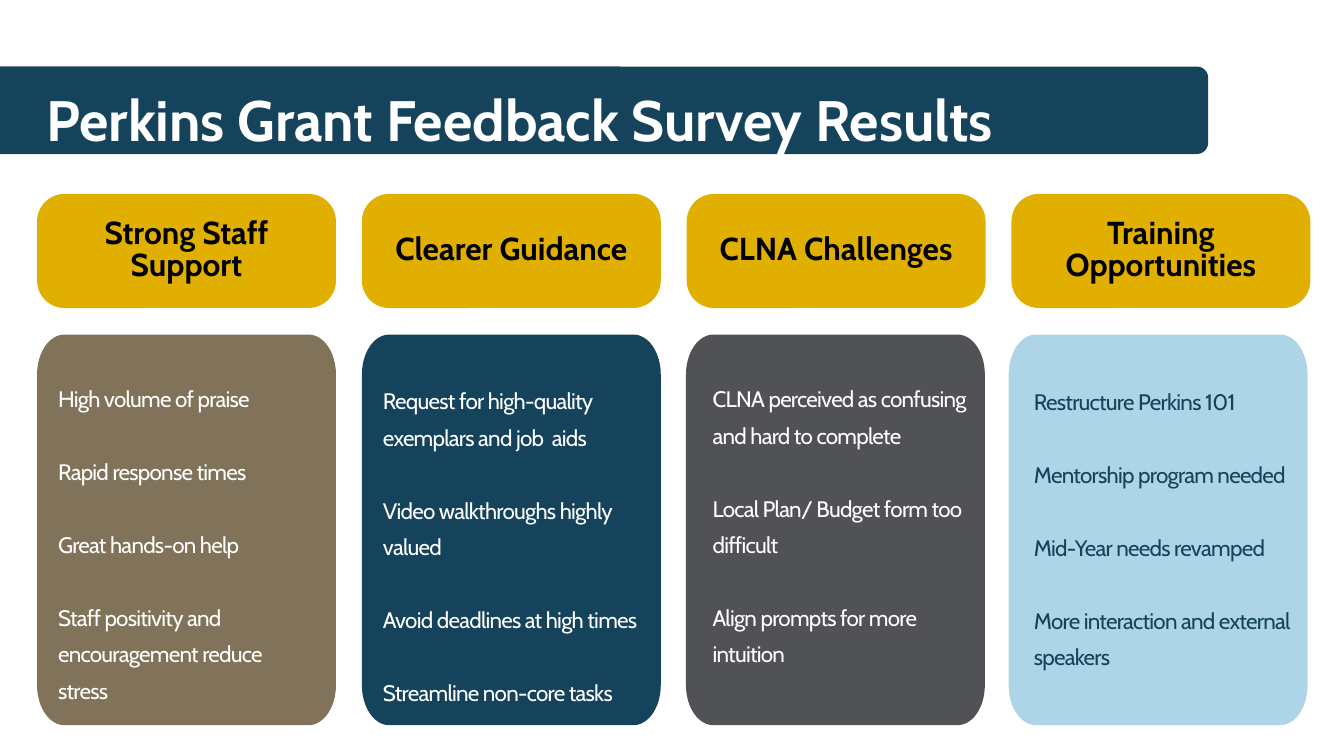
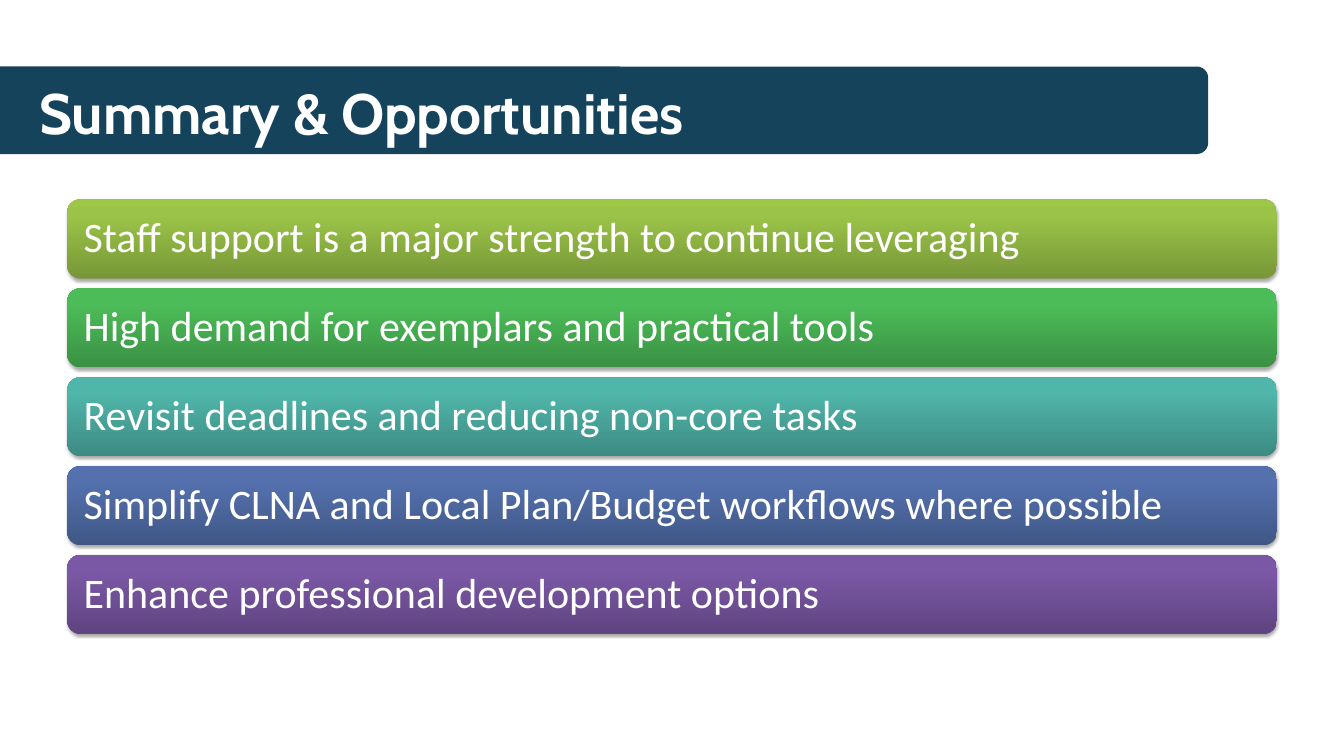
from copy import deepcopy
from math import cos, pi, sin

from lxml import etree
from pptx import Presentation
from pptx.dml.color import RGBColor
from pptx.enum.shapes import MSO_SHAPE
from pptx.enum.text import MSO_ANCHOR, MSO_AUTO_SIZE, PP_ALIGN
from pptx.oxml.ns import qn
from pptx.util import Pt

ROUNDED = MSO_SHAPE.ROUNDED_RECTANGLE
TOP, MIDDLE = MSO_ANCHOR.TOP, MSO_ANCHOR.MIDDLE
NO_AUTOFIT = MSO_AUTO_SIZE.NONE
LEFT, CENTER = PP_ALIGN.LEFT, PP_ALIGN.CENTER

PX = 9525
SLIDE_WIDTH, SLIDE_HEIGHT = 1920, 1080
COMPARISON_LAYOUT, TITLE_LAYOUT = 4, 5

WHITE = RGBColor(0xFF, 0xFF, 0xFF)
BLACK = RGBColor(0x00, 0x00, 0x00)
NAVY = RGBColor(0x14, 0x43, 0x5B)
GOLD = RGBColor(0xE1, 0xAF, 0x00)
TAUPE = RGBColor(0x80, 0x73, 0x59)
GRAY = RGBColor(0x51, 0x52, 0x55)
SKY = RGBColor(0xAE, 0xD5, 0xE7)

HEADING_FONT, BAR_FONT = "Cabin", "Calibri"

COLUMN_LEFT, COLUMN_PITCH, COLUMN_WIDTH = 53, 464, 427
HEADER_TOP, HEADER_HEIGHT = 277, 163
CARD_TOP, CARD_HEIGHT = 478, 558
CARD_CORNER_X, CARD_CORNER_Y, CORNER_STEPS = 39, 57, 12
LIST_WIDTH, LIST_HEIGHT = 367, 468
BAR_TOP, BAR_PITCH, BAR_HEIGHT = 285, 127, 113

THEMES = [
    ("Strong Staff Support", TAUPE, WHITE, 53, 83, 537, [
        "High volume of praise",
        "Rapid response times",
        "Great hands-on help",
        "Staff positivity and encouragement reduce stress",
    ]),
    ("Clearer Guidance", NAVY, WHITE, 517, 547, 540, [
        "Request for high-quality exemplars and job  aids",
        "Video walkthroughs highly valued",
        "Avoid deadlines at high times",
        "Streamline non-core tasks",
    ]),
    ("CLNA Challenges", GRAY, WHITE, 980, 1018, 537, [
        "CLNA perceived as confusing and hard to complete",
        "Local Plan/ Budget form too difficult",
        "Align prompts for more intuition",
    ]),
    ("Training Opportunities", SKY, NAVY, 1441, 1477, 541, [
        "Restructure Perkins 101",
        "Mentorship program needed",
        "Mid-Year needs revamped",
        "More interaction and external speakers",
    ]),
]

OPPORTUNITIES = [
    ("Staff support is a major strength to continue leveraging",
     ("779737", "9BC348", "9DC746")),
    ("High demand for exemplars and practical tools",
     ("3A9144", "4CBC58", "4ABF57")),
    ("Revisit deadlines and reducing non-core tasks",
     ("3D8B83", "50B5AA", "4EB8AC")),
    ("Simplify CLNA and Local Plan/Budget workflows where possible",
     ("405786", "5471AE", "5271B0")),
    ("Enhance professional development options",
     ("5F4480", "7B58A6", "7C57A8")),
]


def place(shape, left, top, width, height):
    shape.left, shape.top = left * PX, top * PX
    shape.width, shape.height = width * PX, height * PX


def format_frame(frame, anchor, inset_x=0, inset_y=0):
    frame.word_wrap = True
    frame.auto_size = NO_AUTOFIT
    frame.vertical_anchor = anchor
    frame.margin_left = frame.margin_right = inset_x * PX
    frame.margin_top = frame.margin_bottom = inset_y * PX


def format_paragraph(paragraph, font_name, size, color, spacing, bold=False, align=LEFT):
    paragraph.alignment = align
    paragraph.line_spacing = spacing
    font = paragraph.font
    font.name, font.size, font.bold = font_name, Pt(size), bold
    font.color.rgb = color


def fill_plain(shape, color):
    shape.shadow.inherit = False
    shape.fill.solid()
    shape.fill.fore_color.rgb = color
    shape.line.fill.background()


def bring_to_front(shape):
    shape.element.getparent().append(shape.element)


def add_rounded(slide, left, top, width, height):
    return slide.shapes.add_shape(ROUNDED, left * PX, top * PX, width * PX, height * PX)


def add_title_band(slide, text, left, top):
    band = add_rounded(slide, -82, 95, 1808, 125)
    band.adjustments[0] = 0.13
    fill_plain(band, NAVY)
    title = slide.shapes.title
    place(title, left, top, 1592, 108)
    title.text_frame.text = text
    format_frame(title.text_frame, TOP)
    format_paragraph(title.text_frame.paragraphs[0], HEADING_FONT, 61, WHITE, Pt(85.4), True)
    bring_to_front(title)


def add_header(slide, text, left):
    header = add_rounded(slide, left, HEADER_TOP, COLUMN_WIDTH, HEADER_HEIGHT)
    header.adjustments[0] = 0.24
    fill_plain(header, GOLD)
    header.text_frame.text = text
    format_frame(header.text_frame, MIDDLE, 28)
    format_paragraph(header.text_frame.paragraphs[0], HEADING_FONT, 34, BLACK, Pt(34), True, CENTER)


def add_card(slide, left, color):
    right, bottom = left + COLUMN_WIDTH, CARD_TOP + CARD_HEIGHT
    inner_left, inner_right = left + CARD_CORNER_X, right - CARD_CORNER_X
    inner_top, inner_bottom = CARD_TOP + CARD_CORNER_Y, bottom - CARD_CORNER_Y
    centers = [(inner_right, inner_bottom), (inner_left, inner_bottom),
               (inner_left, inner_top), (inner_right, inner_top)]
    points = []
    for quarter, (center_x, center_y) in enumerate(centers):
        for step in range(CORNER_STEPS + 1):
            angle = (quarter + step / CORNER_STEPS) * pi / 2
            points.append((round((center_x + CARD_CORNER_X * cos(angle)) * PX),
                           round((center_y + CARD_CORNER_Y * sin(angle)) * PX)))
    builder = slide.shapes.build_freeform(*points[0])
    builder.add_line_segments(points[1:], close=True)
    fill_plain(builder.convert_to_shape(), color)


def fill_list(placeholder, items, left, top, color):
    place(placeholder, left, top, LIST_WIDTH, LIST_HEIGHT)
    frame = placeholder.text_frame
    frame.text = "\n".join(items)
    format_frame(frame, TOP)
    for index, paragraph in enumerate(frame.paragraphs):
        properties = paragraph._p.get_or_add_pPr()
        properties.set("marL", "0")
        properties.set("indent", "0")
        etree.SubElement(properties, qn("a:buNone"))
        paragraph.space_before = Pt(39 if index else 0)
        format_paragraph(paragraph, HEADING_FONT, 24, color, Pt(39))
        paragraph.runs[0]._r.get_or_add_rPr().set("spc", "-80")
    bring_to_front(placeholder)


def fill_gradient(shape, colors):
    shape.fill.gradient()
    shape.fill.gradient_angle = 90
    first_stop = shape.element.find(".//" + qn("a:gs"))
    first_stop.addnext(deepcopy(first_stop))
    for stop, position, color in zip(shape.fill.gradient_stops, (0, 0.8, 1), colors):
        stop.position = position
        stop.color.rgb = RGBColor.from_string(color)


def add_soft_shadow(shape):
    shape.shadow.inherit = False
    effects = shape.element.spPr.find(qn("a:effectLst"))
    shadow = etree.SubElement(effects, qn("a:outerShdw"), blurRad="40000", dist="23000",
                              dir="5400000", rotWithShape="0")
    color = etree.SubElement(shadow, qn("a:srgbClr"), val="000000")
    etree.SubElement(color, qn("a:alpha"), val="35000")


def add_bar(slide, text, top, colors):
    bar = add_rounded(slide, 96, top, 1728, BAR_HEIGHT)
    fill_gradient(bar, colors)
    bar.line.fill.background()
    add_soft_shadow(bar)
    bar.text_frame.text = text
    format_frame(bar.text_frame, MIDDLE, 18, 18)
    format_paragraph(bar.text_frame.paragraphs[0], BAR_FONT, 45, WHITE, 0.9)


def build_survey_slide(presentation):
    slide = presentation.slides.add_slide(presentation.slide_layouts[COMPARISON_LAYOUT])
    add_title_band(slide, "Perkins Grant Feedback Survey Results", 66, 104)
    for index, theme in enumerate(THEMES):
        heading, color, text_color, card_left, list_left, list_top, items = theme
        add_card(slide, card_left, color)
        add_header(slide, heading, COLUMN_LEFT + index * COLUMN_PITCH)
        placeholder = next(item for item in slide.placeholders
                           if item.placeholder_format.idx == index + 1)
        fill_list(placeholder, items, list_left, list_top, text_color)


def build_summary_slide(presentation):
    slide = presentation.slides.add_slide(presentation.slide_layouts[TITLE_LAYOUT])
    add_title_band(slide, "Summary & Opportunities", 56, 95)
    for index, (text, colors) in enumerate(OPPORTUNITIES):
        add_bar(slide, text, BAR_TOP + index * BAR_PITCH, colors)


def main():
    presentation = Presentation()
    presentation.slide_width = SLIDE_WIDTH * PX
    presentation.slide_height = SLIDE_HEIGHT * PX
    build_survey_slide(presentation)
    build_summary_slide(presentation)
    presentation.save("out.pptx")


if __name__ == "__main__":
    main()
